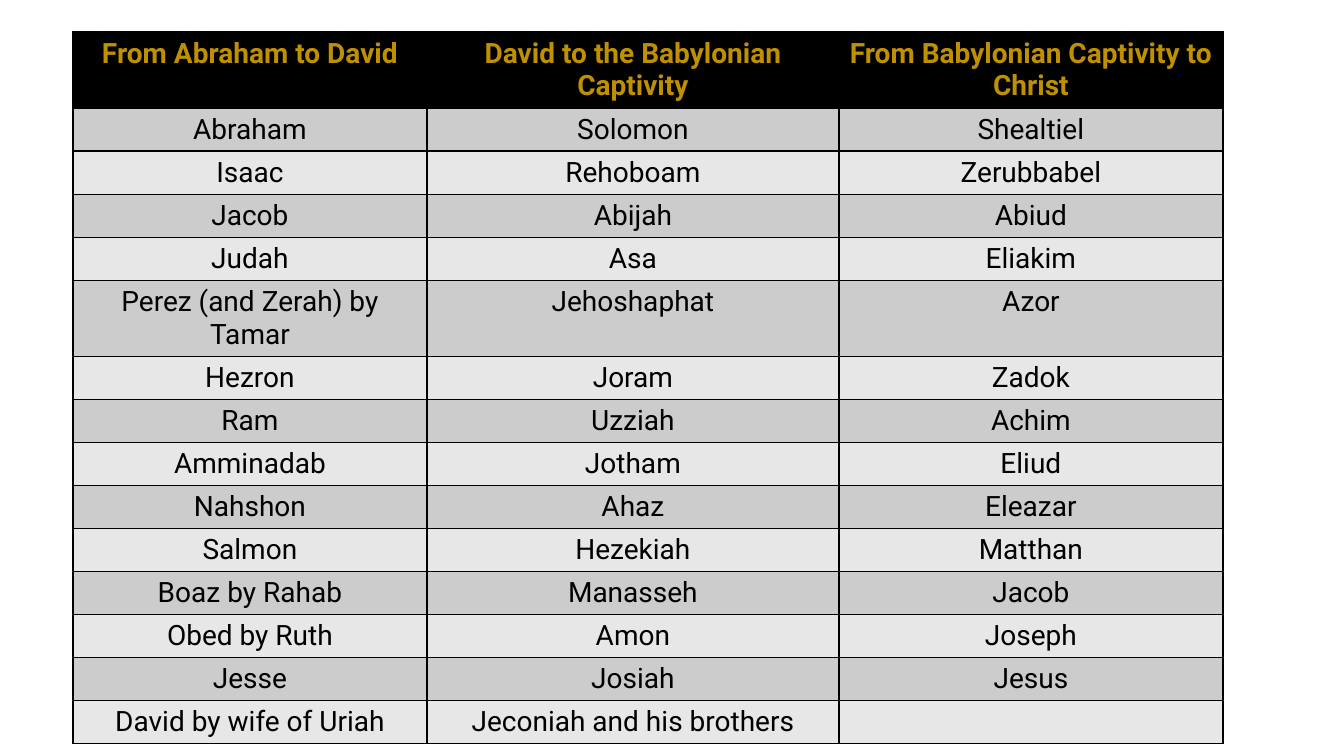
from lxml.etree import SubElement
from pptx import Presentation
from pptx.dml.color import RGBColor as RGB
from pptx.enum.text import PP_ALIGN as ALIGN
from pptx.oxml.ns import qn
from pptx.util import Emu, Pt

COLORS = {"black": "000000", "gold": "BF9000", "dark": "CCCCCC", "light": "E7E7E7"}
COLUMN_WIDTHS = [354, 412, 384]
ROW_HEIGHT = 41
GENERATIONS = [
    ("From Abraham to David", "David to the Babylonian Captivity",
     "From Babylonian Captivity to Christ"),
    ("Abraham", "Solomon", "Shealtiel"),
    ("Isaac", "Rehoboam", "Zerubbabel"),
    ("Jacob", "Abijah", "Abiud"),
    ("Judah", "Asa", "Eliakim"),
    ("Perez (and Zerah) by Tamar", "Jehoshaphat", "Azor"),
    ("Hezron", "Joram", "Zadok"),
    ("Ram", "Uzziah", "Achim"),
    ("Amminadab", "Jotham", "Eliud"),
    ("Nahshon", "Ahaz", "Eleazar"),
    ("Salmon", "Hezekiah", "Matthan"),
    ("Boaz by Rahab", "Manasseh", "Jacob"),
    ("Obed by Ruth", "Amon", "Joseph"),
    ("Jesse", "Josiah", "Jesus"),
    ("David by wife of Uriah", "Jeconiah and his brothers", ""),
]


def px(n):
    """Turn slide pixels (100.8 to the inch) into EMU."""
    return Emu(round(n * 914400 / 100.8))


def add_borders(cell):
    tc_pr = cell._tc.get_or_add_tcPr()
    for side in ("lnL", "lnR", "lnT", "lnB"):
        ln = SubElement(tc_pr, qn(f"a:{side}"), w=str(Pt(1)))
        fill = SubElement(ln, qn("a:solidFill"))
        SubElement(fill, qn("a:srgbClr"), val=COLORS["black"])


prs = Presentation()
prs.slide_width, prs.slide_height = px(1344), px(756)
s = prs.slides.add_slide(prs.slide_layouts[6])

table = s.shapes.add_table(
    len(GENERATIONS), len(COLUMN_WIDTHS), px(73), px(32),
    px(sum(COLUMN_WIDTHS)), px(ROW_HEIGHT * len(GENERATIONS))).table
for column, width in zip(table.columns, COLUMN_WIDTHS):
    column.width = px(width)

for i, names in enumerate(GENERATIONS):
    table.rows[i].height = px(ROW_HEIGHT)
    header = i == 0
    fill = "black" if header else "dark" if i % 2 else "light"
    for j, name in enumerate(names):
        cell = table.cell(i, j)
        add_borders(cell)
        cell.fill.solid()
        cell.fill.fore_color.rgb = RGB.from_string(COLORS[fill])
        cell.text_frame.text = name
        p = cell.text_frame.paragraphs[0]
        p.alignment = ALIGN.CENTER
        for r in p.runs:
            r.font.name = "Roboto"
            r.font.size = Pt(20)
            r.font.bold = header
            r.font.color.rgb = RGB.from_string(COLORS["gold" if header else "black"])

prs.save("out.pptx")
